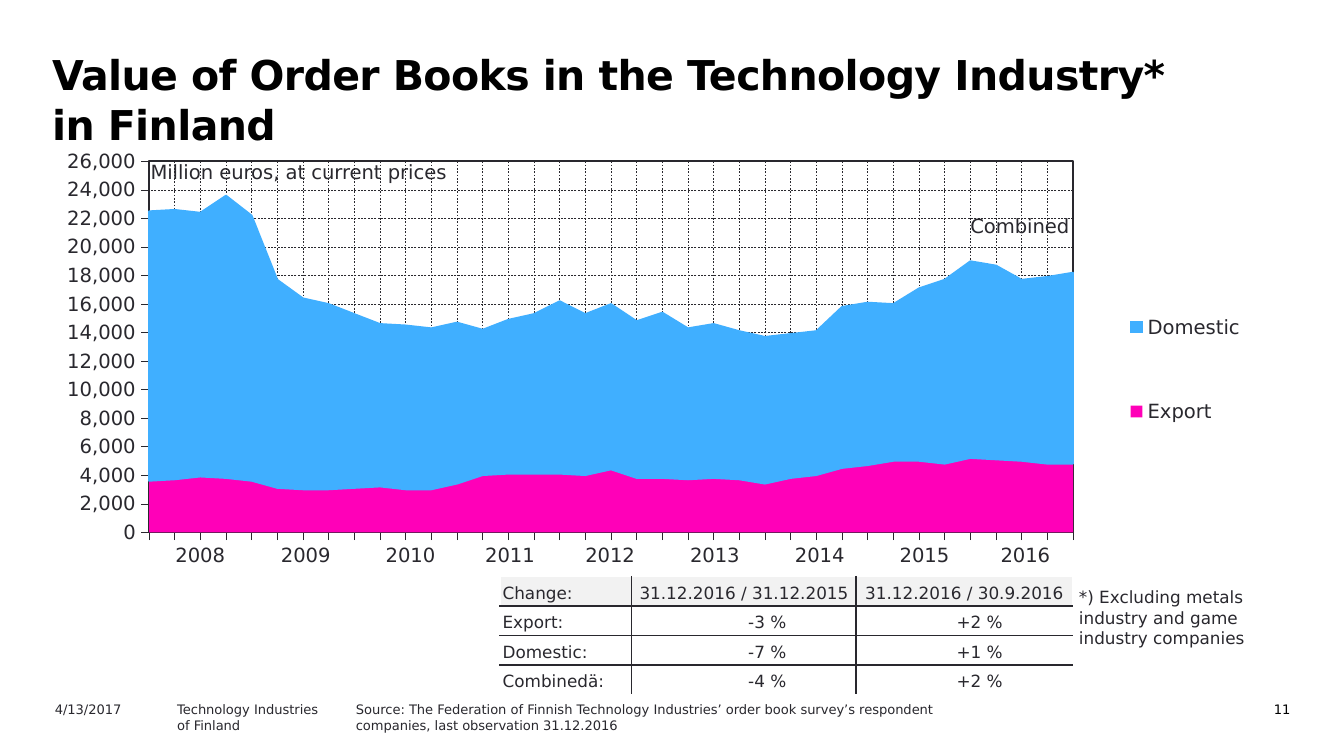
"""Build the slide on order books in the Finnish technology industry."""
from dataclasses import dataclass
from typing import Optional

from lxml.etree import SubElement
from pptx import Presentation
from pptx.chart.data import CategoryChartData
from pptx.dml.color import RGBColor
from pptx.enum.chart import XL_CHART_TYPE as ChartType, XL_LEGEND_POSITION as LegendSide
from pptx.enum.chart import XL_TICK_LABEL_POSITION as LabelSide, XL_TICK_MARK as Tick
from pptx.enum.dml import MSO_LINE_DASH_STYLE as Dash
from pptx.enum.text import MSO_ANCHOR as Anchor, PP_ALIGN as Align
from pptx.oxml import parse_xml
from pptx.oxml.ns import nsdecls, qn
from pptx.util import Inches, Pt


@dataclass(frozen=True)
class Theme:
    font: str = "DejaVu Sans"
    black: str = "000000"
    ink: str = "29282E"
    white: str = "FFFFFF"
    header: str = "F2F2F2"
    export: str = "FF00B8"
    domestic: str = "40AFFF"
    title: float = 22
    label: float = 10.5
    body: float = 9
    footer: float = 7


THEME = Theme()


@dataclass(frozen=True)
class Label:
    lines: tuple
    left: float
    top: float
    width: float
    height: float
    size: float
    color: str = THEME.ink
    bold: bool = False
    align: Align = Align.LEFT
    wrap: bool = True
    inset: float = 0.1
    leading: Optional[float] = None
    tracking: int = 0


@dataclass(frozen=True)
class Series:
    name: str
    color: str
    hundreds: tuple


LABELS = (
    Label(("Value of Order Books in the Technology Industry* in Finland",), 0.29, 0.31, 8.73, 0.71,
          THEME.title, THEME.black, bold=True, leading=27, tracking=-30),
    Label(("11",), 8.76, 5.17, 0.94, 0.18, THEME.footer, THEME.black, align=Align.RIGHT),
    Label(("Source: The Federation of Finnish Technology Industries’ order book survey’s respondent "
           "companies, last observation 31.12.2016",), 2.55, 5.17, 5, 0.26, THEME.footer),
    Label(("Million euros, at current prices",), 1.03, 1.14, 2.59, 0.27, THEME.label,
          wrap=False, inset=0.09),
    Label(("*) Excluding metals industry and game industry companies",), 7.93, 4.32, 1.66, 0.56,
          THEME.body),
    Label(("Combined",), 7.13, 1.54, 1.06, 0.27, THEME.label, inset=0.09),
    Label(("Technology Industries", "of Finland"), 1.22, 5.17, 1.73, 0.18, THEME.footer),
    Label(("4/13/2017",), 0.31, 5.17, 1, 0.18, THEME.footer),
)
ORDERS = (
    Series("Export", THEME.export, (
        36, 37, 39, 38, 36, 31, 30, 30, 31, 32, 30, 30, 34, 40, 41, 41, 41, 40, 44, 38, 38, 37, 38,
        37, 34, 38, 40, 45, 47, 50, 50, 48, 52, 51, 50, 48, 48)),
    Series("Domestic", THEME.domestic, (
        189, 189, 185, 198, 186, 146, 134, 130, 122, 114, 115, 113, 113, 102, 108, 112, 121, 113,
        116, 110, 116, 106, 108, 104, 103, 101, 101, 113, 114, 110, 121, 129, 138, 136, 127, 131,
        134)),
)
YEAR_WIDTHS = (0.78, 0.79, 0.77, 0.71, 0.78, 0.78, 0.78, 0.78, 0.72)
CHANGE_WIDTHS = (0.98, 1.67, 1.61)
CHANGES = (
    ("Change:", "31.12.2016 / 31.12.2015", "31.12.2016 / 30.9.2016"),
    ("Export:", "-3 %", "+2 %"),
    ("Domestic:", "-7 %", "+1 %"),
    ("Combinedä:", "-4 %", "+2 %"),
)


def rgb(color: str) -> RGBColor:
    return RGBColor.from_string(color)


def set_font(font, size: float, color: str = THEME.ink, bold: bool = False) -> None:
    font.name, font.size, font.bold = THEME.font, Pt(size), bold
    font.color.rgb = rgb(color)


def set_line(line, color: str, width: float, dash: Optional[Dash] = None) -> None:
    line.color.rgb = rgb(color)
    line.width = Pt(width)
    if dash is not None:
        line.dash_style = dash


def add_label(slide, label: Label) -> None:
    box = slide.shapes.add_textbox(*map(Inches, (label.left, label.top, label.width, label.height)))
    frame = box.text_frame
    frame.word_wrap = label.wrap
    frame.margin_left = frame.margin_right = Inches(label.inset)
    frame.text = "\n".join(label.lines)
    for paragraph in frame.paragraphs:
        paragraph.alignment = label.align
        if label.leading:
            paragraph.line_spacing = Pt(label.leading)
        set_font(paragraph.font, label.size, label.color, label.bold)
        if label.tracking:
            paragraph._p.pPr.find(qn("a:defRPr")).set("spc", str(label.tracking))


def manual_layout(x: float, y: float, w: float, h: float, inner: bool = False):
    target = '<c:layoutTarget val="inner"/>' if inner else ""
    sizes = "".join(f'<c:{key} val="{value}"/>' for key, value in zip("xywh", (x, y, w, h)))
    return parse_xml(
        f'<c:layout {nsdecls("c")}><c:manualLayout>{target}<c:xMode val="edge"/>'
        f'<c:yMode val="edge"/>{sizes}</c:manualLayout></c:layout>')


def style_axis(axis) -> None:
    axis.major_tick_mark, axis.minor_tick_mark = Tick.OUTSIDE, Tick.NONE
    axis.has_major_gridlines = True
    set_line(axis.format.line, THEME.ink, 0.22)
    set_line(axis.major_gridlines.format.line, THEME.ink, 0.25, Dash.DASH)
    set_font(axis.tick_labels.font, THEME.label)


def add_order_chart(slide) -> None:
    data = CategoryChartData(number_format="#,##0")
    data.categories = [str(quarter + 1) for quarter in range(len(ORDERS[0].hundreds))]
    for series in ORDERS:
        data.add_series(series.name, [100 * value for value in series.hundreds])
    chart = slide.shapes.add_chart(
        ChartType.AREA_STACKED, *map(Inches, (0.42, 1.11, 9.18, 3.12)), data).chart
    chart.has_title = False
    set_font(chart.font, THEME.label)
    chart.plots[0].vary_by_categories = False
    for series, drawn in zip(ORDERS, chart.plots[0].series):
        drawn.format.fill.solid()
        drawn.format.fill.fore_color.rgb = rgb(series.color)
    set_line(drawn.format.line, THEME.domestic, 0.88)

    style_axis(chart.category_axis)
    chart.category_axis.tick_label_position = LabelSide.NONE
    amounts = chart.value_axis
    style_axis(amounts)
    amounts.minimum_scale, amounts.maximum_scale, amounts.major_unit = 0, 26000, 2000
    amounts.tick_labels.number_format = "#,##0"
    amounts.tick_labels.number_format_is_linked = False
    amounts._element.find(qn("c:crossBetween")).set("val", "midCat")

    chart.has_legend = True
    legend = chart.legend
    legend.position, legend.include_in_layout = LegendSide.RIGHT, False
    set_font(legend.font, THEME.label)
    for old in legend._element.findall(qn("c:layout")):
        legend._element.remove(old)
    legend._element.find(qn("c:legendPos")).addnext(manual_layout(0.85, 0.25, 0.13, 0.55))

    plot_area = chart._chartSpace.chart.plotArea
    for old in plot_area.findall(qn("c:layout")):
        plot_area.remove(old)
    plot_area.insert(0, manual_layout(0.07, 0.03, 0.75, 0.88, inner=True))
    x, y, w, h = plot_area[0][0][-4:]
    for edge, value in zip((x, y, w, h), (0.075, 0.029, 0.749, 0.885)):
        edge.set("val", str(value))
    plot_area.append(parse_xml(
        f'<c:spPr {nsdecls("c", "a")}><a:noFill/><a:ln w="12700"><a:solidFill>'
        f'<a:srgbClr val="{THEME.ink}"/></a:solidFill></a:ln></c:spPr>'))


def add_plain_table(slide, left: float, top: float, widths: tuple, rows: int, height: float):
    table = slide.shapes.add_table(
        rows, len(widths), *map(Inches, (left, top, sum(widths), rows * height))).table
    table.first_row = table.horz_banding = False
    table._tbl.tblPr.find(qn("a:tableStyleId")).text = "{2D5ABB26-0587-4C30-8999-92F81FD0307C}"
    for column, width in zip(table.columns, widths):
        column.width = Inches(width)
    return table


def fill_cell(cell, text: str, size: float, align: Align, color: Optional[str] = None) -> None:
    cell.text = text
    paragraph = cell.text_frame.paragraphs[0]
    paragraph.alignment = align
    set_font(paragraph.font, size)
    if color:
        cell.fill.solid()
        cell.fill.fore_color.rgb = rgb(color)
    else:
        cell.fill.background()


def set_border(cell, side: str, color: str) -> None:
    line = SubElement(cell._tc.get_or_add_tcPr(), qn(f"a:ln{side}"), w=str(Pt(1)))
    SubElement(SubElement(line, qn("a:solidFill")), qn("a:srgbClr"), val=color)


def add_years(slide) -> None:
    table = add_plain_table(slide, 1.1, 4, YEAR_WIDTHS, 1, 0.25)
    for index, cell in enumerate(table.rows[0].cells):
        fill_cell(cell, str(2008 + index), THEME.label, Align.CENTER)


def add_changes(slide) -> None:
    table = add_plain_table(slide, 3.72, 4.29, CHANGE_WIDTHS, len(CHANGES), 0.22)
    last_row, last_column = len(CHANGES) - 1, len(CHANGE_WIDTHS) - 1
    for r, texts in enumerate(CHANGES):
        for c, text in enumerate(texts):
            cell = table.cell(r, c)
            outer = {"L": c == 0, "R": c == last_column, "T": r == 0, "B": r == last_row}
            for side, is_outer in outer.items():
                set_border(cell, side, THEME.white if is_outer else THEME.ink)
            align = Align.LEFT if c == 0 else Align.CENTER if r == 0 else Align.RIGHT
            fill = {0: THEME.header, last_row: THEME.white}.get(r)
            fill_cell(cell, text, THEME.body, align, fill)
            cell.vertical_anchor = Anchor.BOTTOM
            cell.margin_left = cell.margin_top = cell.margin_bottom = Inches(0.02)
            cell.margin_right = Inches(0.52 if align == Align.RIGHT else 0.02)


def main() -> None:
    deck = Presentation()
    deck.slide_width = Inches(10)
    deck.slide_height = deck.slide_width * 9 // 16
    slide = deck.slides.add_slide(deck.slide_layouts[6])
    add_order_chart(slide)
    add_years(slide)
    add_changes(slide)
    for label in LABELS:
        add_label(slide, label)
    deck.save("out.pptx")


if __name__ == "__main__":
    main()
